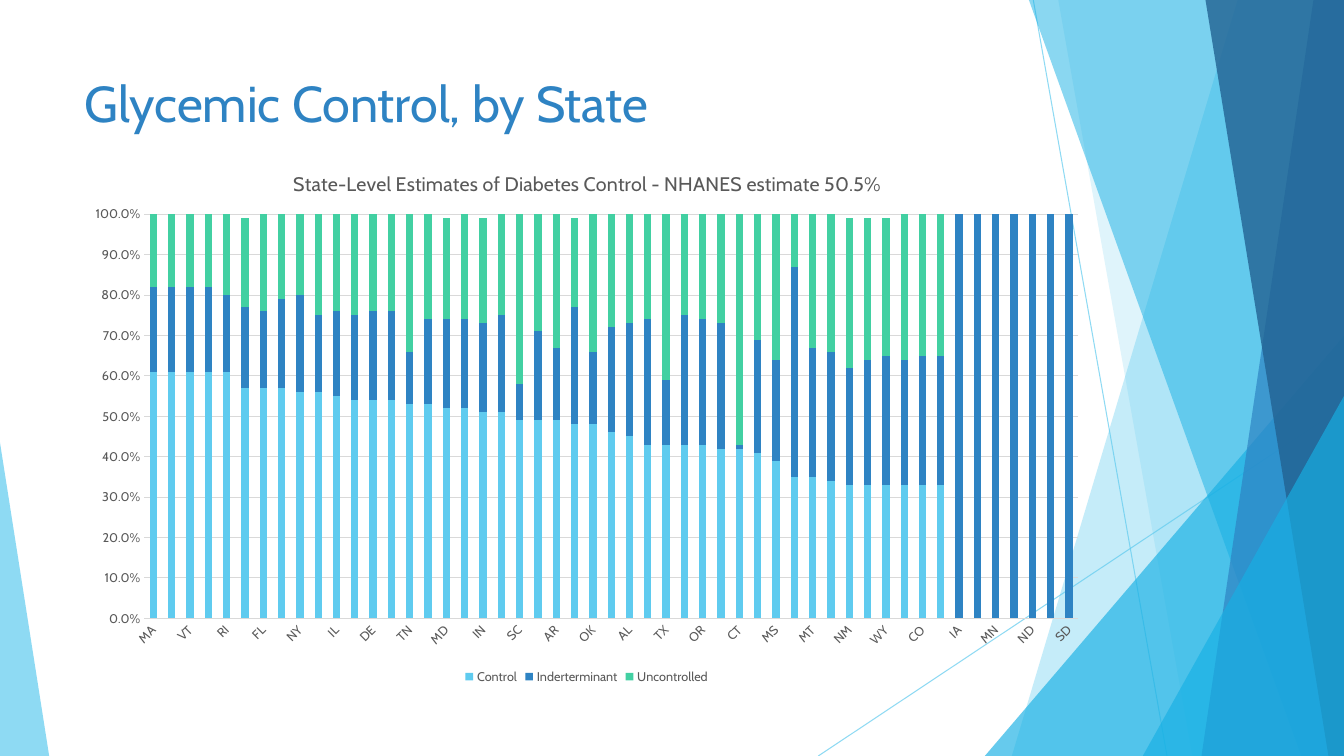
from lxml.etree import SubElement
from pptx import Presentation
from pptx.chart.data import CategoryChartData
from pptx.dml.color import RGBColor
from pptx.enum.chart import XL_CHART_TYPE, XL_LEGEND_POSITION, XL_TICK_MARK
from pptx.enum.shapes import MSO_CONNECTOR, MSO_SHAPE
from pptx.enum.text import MSO_ANCHOR, PP_ALIGN
from pptx.oxml import parse_xml
from pptx.oxml.ns import nsdecls, qn
from pptx.util import Cm, Pt

SKY = RGBColor(0x5F, 0xCB, 0xEF)
CYAN = RGBColor(0x17, 0xB0, 0xE4)
BLUE = RGBColor(0x2E, 0x83, 0xC3)
NAVY = RGBColor(0x22, 0x62, 0x92)
GREEN = RGBColor(0x42, 0xD0, 0xA2)
GREY = RGBColor(0x59, 0x59, 0x59)
PALE = RGBColor(0xD9, 0xD9, 0xD9)
FONT = "Cabin"
WIDTH, HEIGHT = 33.87, 19.05

# Facets reaching the right edge: top left x, bottom left x, colour, opacity
BACK_FACETS = [(31.19, 25.5, SKY, 36), (26.67, 30.05, SKY, 20)]
FRONT_FACETS = [(25.93, 32.79, CYAN, 50), (33.1, 30.28, BLUE, 70),
                (30.38, 33.48, NAVY, 80)]

STATES = """MA ME VT NH RI PA FL NJ NY WV IL NC DE VA TN MI MD OH IN DC SC WI AR GA
OK KY AL HI TX WA OR AK CT CA MS LA MT ID NM AZ WY NV CO UT IA KS MN MO ND NE SD""".split()
UNMEASURED = 7  # the last states have only an indeterminate share
CONTROL = [61, 61, 61, 61, 61, 57, 57, 57, 56, 56, 55, 54, 54, 54, 53, 53, 52, 52, 51, 51,
           49, 49, 49, 48, 48, 46, 45, 43, 43, 43, 43, 42, 42, 41, 39, 35, 35, 34, 33, 33,
           33, 33, 33, 33] + [None] * UNMEASURED
INDETERMINATE = [21, 21, 21, 21, 19, 20, 19, 22, 24, 19, 21, 21, 22, 22, 13, 21, 22, 22, 22,
                 24, 9, 22, 18, 29, 18, 26, 28, 31, 16, 32, 31, 31, 1, 28, 25, 52, 32, 32,
                 29, 31, 32, 31, 32, 32] + [100] * UNMEASURED
UNCONTROLLED = [18, 18, 18, 18, 20, 22, 24, 21, 20, 25, 24, 25, 25, 25, 34, 26, 25, 26, 26,
                25, 42, 29, 33, 22, 34, 28, 27, 26, 41, 26, 26, 28, 57, 31, 36, 13, 34, 35,
                37, 35, 34, 36, 35, 35] + [None] * UNMEASURED
SERIES = [("Control", CONTROL, SKY), ("Inderterminant", INDETERMINATE, BLUE),
          ("Uncontrolled", UNCONTROLLED, GREEN)]


def style_font(font, size, color):
    font.name, font.size, font.bold = FONT, Pt(size), False
    font.color.rgb = color


def write(frame, text, size, color, align=None):
    para = frame.paragraphs[0]
    para.alignment = align
    span = para.add_run()
    span.text = text
    style_font(span.font, size, color)


def set_opacity(fill_owner, percent):
    color = fill_owner._element.spPr.find(".//" + qn("a:srgbClr"))
    SubElement(color, qn("a:alpha")).set("val", str(percent * 1000))


def place(element, index, target="", **fractions):
    """Give a chart part a fixed place, in fractions of the chart."""
    for old in element.findall(qn("c:layout")):
        element.remove(old)
    inner = f'<c:layoutTarget val="{target}"/>' if target else ""
    inner += '<c:xMode val="edge"/><c:yMode val="edge"/>'
    inner += "".join(f'<c:{key} val="{value}"/>' for key, value in fractions.items())
    element.insert(index, parse_xml(
        f'<c:layout {nsdecls("c")}><c:manualLayout>{inner}</c:manualLayout></c:layout>'))


class SlideMaker:
    def __init__(self, deck):
        self.slide = deck.slides.add_slide(deck.slide_layouts[5])
        self.shapes = self.slide.shapes

    def title(self, text, left, top, width, height):
        box = self.shapes.title
        box.left, box.top, box.width, box.height = map(Cm, (left, top, width, height))
        box.text_frame.vertical_anchor = MSO_ANCHOR.TOP
        write(box.text_frame, text, 36, BLUE, PP_ALIGN.LEFT)

    def line(self, *ends):
        line = self.shapes.add_connector(MSO_CONNECTOR.STRAIGHT, *map(Cm, ends))
        line.line.color.rgb, line.line.width = SKY, Pt(0.75)
        set_opacity(line, 70)
        SubElement(line._element.spPr, qn("a:effectLst"))

    def paint(self, shape, color, opacity):
        shape.shadow.inherit = False
        shape.fill.solid()
        shape.fill.fore_color.rgb = color
        shape.line.fill.background()
        set_opacity(shape, opacity)

    def facet(self, top_x, bottom_x, color, opacity):
        outline = self.shapes.build_freeform(Cm(top_x), 0)
        outline.add_line_segments([(Cm(WIDTH), 0), (Cm(WIDTH), Cm(HEIGHT)),
                                   (Cm(bottom_x), Cm(HEIGHT))])
        self.paint(outline.convert_to_shape(), color, opacity)

    def corner(self, left, top, width, peak, color, opacity):
        shape = self.shapes.add_shape(MSO_SHAPE.ISOSCELES_TRIANGLE, Cm(left), Cm(top),
                                      Cm(width), Cm(HEIGHT - top))
        shape.adjustments[0] = peak
        self.paint(shape, color, opacity)

    def stacked_chart(self, heading, left, top, width, height):
        data = CategoryChartData(number_format="0.0%")
        data.categories = STATES
        for name, percents, _ in SERIES:
            data.add_series(name, [None if p is None else p / 100 for p in percents])
        chart = self.shapes.add_chart(XL_CHART_TYPE.COLUMN_STACKED, Cm(left), Cm(top),
                                      Cm(width), Cm(height), data).chart
        style_font(chart.font, 9, GREY)
        write(chart.chart_title.text_frame, heading, 14, GREY)
        place(chart.chart_title._element, 1, x=0.21, y=0.04)
        place(chart._chartSpace.chart.plotArea, 0, "inner", x=0.068, y=0.127, w=0.912, h=0.744)

        # Columns
        plot = chart.plots[0]
        plot.gap_width, plot.overlap, plot.vary_by_categories = 150, 100, False
        for series, (_, _, color) in zip(plot.series, SERIES):
            series.format.fill.solid()
            series.format.fill.fore_color.rgb = color

        # Axes
        states, shares = chart.category_axis, chart.value_axis
        for axis in (states, shares):
            axis.major_tick_mark = axis.minor_tick_mark = XL_TICK_MARK.NONE
            style_font(axis.tick_labels.font, 9, GREY)
        shares.minimum_scale, shares.maximum_scale, shares.major_unit = 0, 1, 0.1
        shares.tick_labels.number_format = "0.0%"
        shares.tick_labels.number_format_is_linked = False
        shares.format.line.fill.background()
        for rule in (states.format.line, shares.major_gridlines.format.line):
            rule.color.rgb, rule.width = PALE, Pt(0.75)
        states._element.find(".//" + qn("a:bodyPr")).set("rot", "-2700000")
        states._element.find(qn("c:lblOffset")).addnext(
            parse_xml(f'<c:tickLblSkip {nsdecls("c")} val="2"/>'))

        # Legend
        chart.has_legend = True
        chart.legend.position = XL_LEGEND_POSITION.BOTTOM
        chart.legend.include_in_layout = False
        style_font(chart.legend.font, 9, GREY)


def main():
    deck = Presentation()
    deck.slide_width, deck.slide_height = Cm(WIDTH), Cm(HEIGHT)
    page = SlideMaker(deck)

    # Decoration, from back to front
    page.line(26.04, 0, 29.41, HEIGHT)
    page.line(WIDTH, 10.24, 20.62, HEIGHT)
    for facet in BACK_FACETS:
        page.facet(*facet)
    page.corner(24.82, 8.46, WIDTH - 24.82, 1, CYAN, 66)
    for facet in FRONT_FACETS:
        page.facet(*facet)
    page.corner(28.8, 9.98, WIDTH - 28.8, 1, CYAN, 66)
    page.corner(0, 11.15, 1.24, 0, SKY, 70)

    # Content
    page.title("Glycemic Control, by State", 1.88, 1.7, 23.88, 3.66)
    page.stacked_chart("State-Level Estimates of Diabetes Control - NHANES estimate 50.5%",
                       1.88, 3.66, 25.81, 13.69)
    deck.save("out.pptx")


if __name__ == "__main__":
    main()
